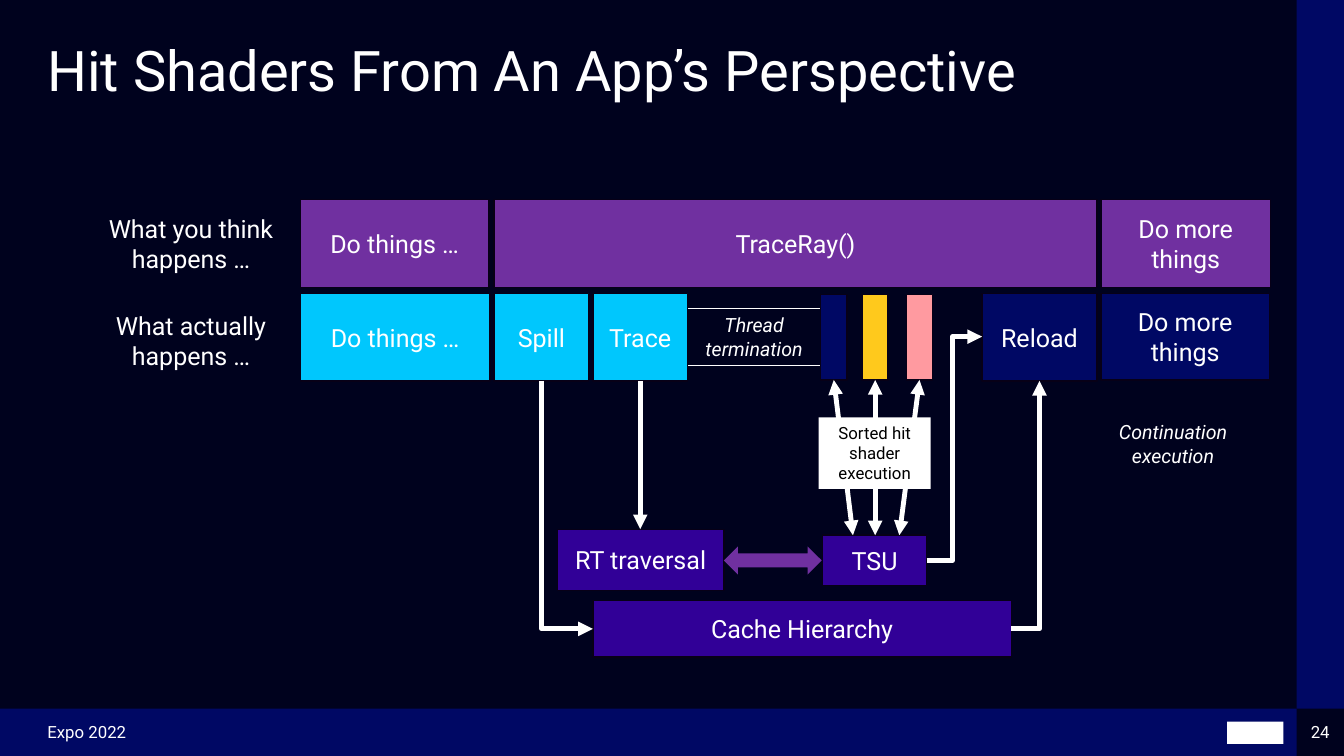
from dataclasses import dataclass
from typing import Optional

from lxml import etree
from pptx import Presentation
from pptx import util as u
from pptx.dml import color
from pptx.enum import shapes, text
from pptx.oxml import ns

WHITE, BLACK, INK = "FFFFFF", "000000", "070017"
BACKDROP, NAVY, INDIGO = "00021E", "000864", "310097"
PURPLE, CYAN, YELLOW, PINK = "7030A0", "00C7FD", "FFC91C", "FF9AA0"

SHAPE, ALIGN, ANCHOR = shapes.MSO_SHAPE, text.PP_ALIGN, text.MSO_ANCHOR
BODY = {"size": u.Pt(17.9)}
ASIDE = {"size": u.Pt(14), "italic": True}
SMALL = {"size": u.Pt(12)}
NO_INSETS = {"margin_left": 0, "margin_right": 0, "margin_top": 0, "margin_bottom": 0}
TOP = {"vertical_anchor": ANCHOR.TOP}


@dataclass(frozen=True)
class Box:
    left: float
    top: float
    width: float
    height: float
    fill: Optional[str] = None
    words: str = ""
    border: Optional[str] = INK
    border_pt: float = 1
    kind: SHAPE = SHAPE.RECTANGLE


@dataclass(frozen=True)
class Arrow:
    start: tuple[float, float]
    end: tuple[float, float]
    preset: str = "line"
    both_ends: bool = False
    down_first: bool = False
    bend: Optional[int] = None


def rgb(code: str) -> color.RGBColor:
    return color.RGBColor.from_string(code)


def apply(target, values: dict) -> None:
    for name, value in values.items():
        setattr(target, name, value)


def write(frame, words: str, font: dict, layout: Optional[dict] = None,
          align=ALIGN.CENTER, ink: str = WHITE) -> None:
    apply(frame, {"word_wrap": True, "auto_size": text.MSO_AUTO_SIZE.NONE,
                  "vertical_anchor": ANCHOR.MIDDLE, **(layout or {})})
    paragraph = frame.paragraphs[0]
    paragraph.text = words
    paragraph.alignment = align
    for run in paragraph.runs:
        apply(run.font, {"name": "Roboto", **font})
        run.font.color.rgb = rgb(ink)


def draw_box(slide, box: Box, font: dict = BODY, layout: Optional[dict] = None,
             ink: str = WHITE) -> None:
    place = map(u.Inches, (box.left, box.top, box.width, box.height))
    shape = slide.shapes.add_shape(box.kind, *place)
    shape.shadow.inherit = False
    if box.fill:
        shape.fill.solid()
        shape.fill.fore_color.rgb = rgb(box.fill)
    else:
        shape.fill.background()
    if box.border:
        shape.line.color.rgb = rgb(box.border)
        shape.line.width = u.Pt(box.border_pt)
    else:
        shape.line.fill.background()
    if box.words:
        write(shape.text_frame, box.words, font, layout, ink=ink)


def draw_label(slide, place: tuple, words: str, font: dict, layout: dict,
               align=ALIGN.CENTER) -> None:
    label = slide.shapes.add_textbox(*map(u.Inches, place))
    write(label.text_frame, words, font, layout, align)


def draw_arrow(slide, arrow: Arrow) -> None:
    (x1, y1), (x2, y2) = arrow.start, arrow.end
    if arrow.down_first:
        # Lay the elbow on its side about its centre; the rotation below stands it up.
        cx, cy, half_x, half_y = (x1 + x2) / 2, (y1 + y2) / 2, (x2 - x1) / 2, (y2 - y1) / 2
        x1, y1, x2, y2 = cx + half_y, cy - half_x, cx - half_y, cy + half_x
    connector = slide.shapes.add_connector(
        shapes.MSO_CONNECTOR.STRAIGHT, *map(u.Inches, (x1, y1, x2, y2)))
    connector.line.color.rgb = rgb(WHITE)
    connector.line.width = u.Pt(3.5)
    properties = connector.element.spPr
    if arrow.down_first:
        properties.find(ns.qn("a:xfrm")).set("rot", str(270 * 60000))
    geometry = properties.find(ns.qn("a:prstGeom"))
    geometry.set("prst", arrow.preset)
    if arrow.bend is not None:
        guides = geometry.find(ns.qn("a:avLst"))
        etree.SubElement(guides, ns.qn("a:gd"), name="adj1", fmla=f"val {arrow.bend}")
    stroke = properties.find(ns.qn("a:ln"))
    for tip in ("a:headEnd", "a:tailEnd") if arrow.both_ends else ("a:tailEnd",):
        etree.SubElement(stroke, ns.qn(tip), type="triangle")
    etree.SubElement(properties, ns.qn("a:effectLst"))


THINK_TOP, ACTUAL_TOP, ROW = 1.98, 2.91, 0.87
BAR_TOP, BAR_WIDTH, BAR_HEIGHT = 2.92, 0.26, 0.85
TSU_TOP = 5.31

FRAME = [
    Box(0, 7.03, 12.86, 0.47, NAVY, border=None),
    Box(12.86, 0, 0.47, 7.03, NAVY, border=None),
    Box(12.17, 7.16, 0.56, 0.22, WHITE, border=None),
]
STEPS = [
    Box(2.98, THINK_TOP, 1.87, ROW, PURPLE, "Do things …"),
    Box(4.9, THINK_TOP, 5.98, ROW, PURPLE, "TraceRay()"),
    Box(10.92, THINK_TOP, 1.68, ROW, PURPLE, "Do more things"),
    Box(2.98, ACTUAL_TOP, 1.88, ROW, CYAN, "Do things …"),
    Box(4.9, ACTUAL_TOP, 0.94, ROW, CYAN, "Spill"),
    Box(5.88, ACTUAL_TOP, 0.94, ROW, CYAN, "Trace"),
    Box(9.74, ACTUAL_TOP, 1.14, ROW, NAVY, "Reload"),
    Box(10.92, ACTUAL_TOP, 1.67, 0.86, NAVY, "Do more things"),
    Box(5.53, 5.25, 1.65, 0.61, INDIGO, "RT traversal"),
    Box(8.16, TSU_TOP, 1.03, 0.5, INDIGO, "TSU"),
    Box(5.88, 5.96, 4.15, 0.56, INDIGO, "Cache Hierarchy"),
    Box(7.18, 5.42, 0.97, 0.28, PURPLE, border=None, kind=SHAPE.LEFT_RIGHT_ARROW),
]
TERMINATION = Box(6.68, 3.06, 1.6, 0.57, None, "Thread termination", WHITE, 0.75)
SORTED_HITS = Box(8.12, 4.14, 1.11, 0.71, WHITE, "Sorted hit shader execution", None)
# Left edge of each hit shader, its colour, and where its arrow meets the TSU
HIT_SHADERS = [(8.14, NAVY, 8.46), (8.55, YELLOW, 8.68), (8.99, PINK, 8.92)]
FLOWS = [
    Arrow((6.35, 3.78), (6.35, 5.25)),
    Arrow((5.37, 3.78), (5.88, 6.24), "bentConnector2", down_first=True),
    Arrow((10.03, 6.24), (10.31, 3.78), "bentConnector2"),
    Arrow((9.19, 5.56), (9.74, 3.34), "bentConnector3", bend=46900),
]
LABELS = [
    ((0.82, 2.07, 2.15, 0.71), "What you think happens …", BODY, TOP),
    ((0.82, 3.03, 2.15, 0.71), "What actually\nhappens …", BODY, TOP),
    ((10.73, 4.12, 1.81, 0.57), "Continuation execution", ASIDE, TOP),
    ((12.86, 7.03, 0.47, 0.47), "24", SMALL, NO_INSETS),
    ((0.47, 7.03, 3.52, 0.47), "Expo 2022", SMALL, NO_INSETS, ALIGN.LEFT),
]


def main() -> None:
    deck = Presentation()
    apply(deck, {"slide_width": u.Inches(13.33), "slide_height": u.Inches(7.5)})
    slide = deck.slides.add_slide(deck.slide_layouts[5])
    slide.background.fill.solid()
    slide.background.fill.fore_color.rgb = rgb(BACKDROP)

    title = slide.shapes.title
    apply(title, {"left": u.Inches(0.47), "top": u.Inches(0.47),
                  "width": u.Inches(11.91), "height": u.Inches(1.34)})
    write(title.text_frame, "Hit Shaders From An App’s Perspective",
          {"size": u.Pt(40)}, {**NO_INSETS, **TOP}, ALIGN.LEFT)
    title.text_frame.paragraphs[0].line_spacing = 0.83

    for box in FRAME:
        draw_box(slide, box)
    draw_box(slide, TERMINATION, ASIDE, TOP)
    for box in STEPS:
        draw_box(slide, box)
    for left, fill, foot in HIT_SHADERS:
        draw_box(slide, Box(left, BAR_TOP, BAR_WIDTH, BAR_HEIGHT, fill))
        bar_foot = (left + BAR_WIDTH / 2, BAR_TOP + BAR_HEIGHT)
        draw_arrow(slide, Arrow((foot, TSU_TOP), bar_foot, both_ends=True))
    for flow in FLOWS:
        draw_arrow(slide, flow)
    for label in LABELS:
        draw_label(slide, *label)
    draw_box(slide, SORTED_HITS, SMALL, {"margin_left": 0, "margin_right": 0, **TOP}, BLACK)

    deck.save("out.pptx")


if __name__ == "__main__":
    main()
